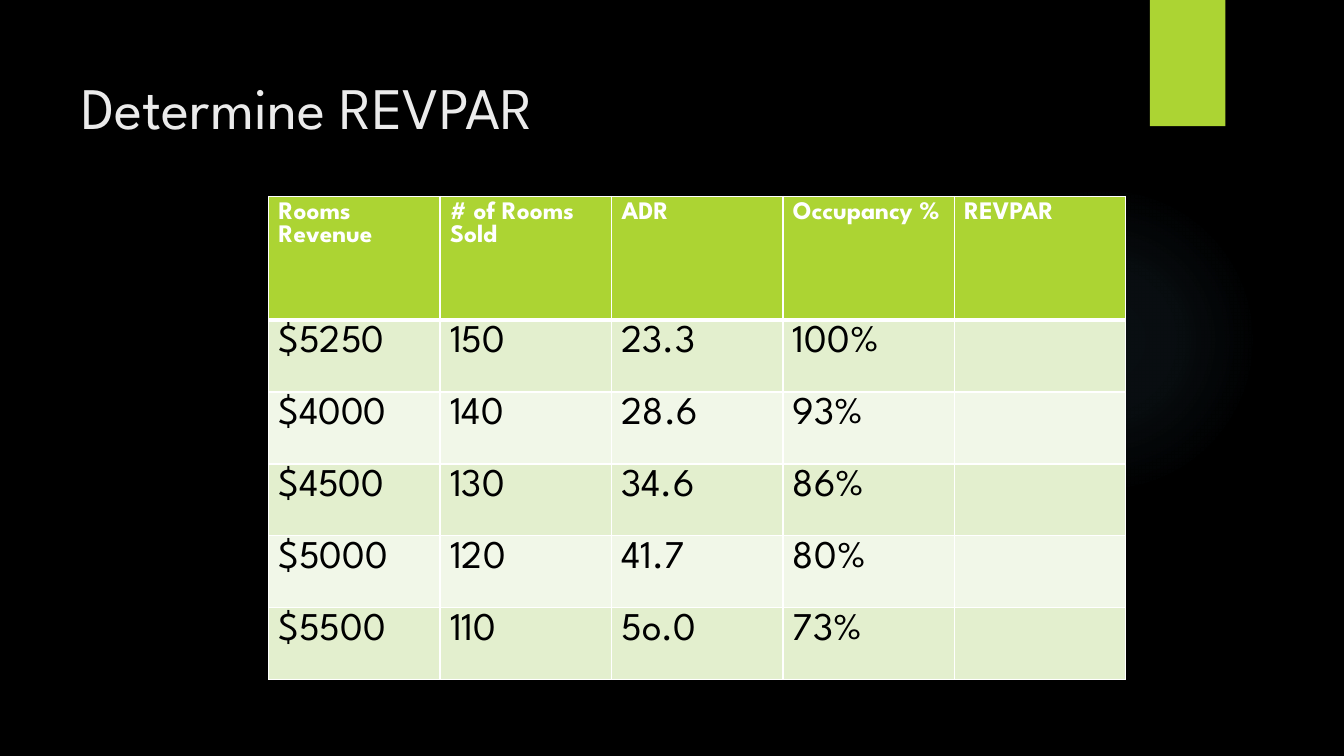
import pptx
import pptx.dml.color
import pptx.enum.shapes
import pptx.enum.text
import pptx.oxml
import pptx.oxml.ns
import pptx.util
from pptx.util import Cm

FONT = "League Spartan"
GREEN, WHITE, BLACK = "ACD433", "FFFFFF", "000000"
BANDS = ("E3EFCE", "F1F7E8")
GLOW = "7AC4F0"
GLOW_STOPS = ((0, 7), (36, 6), (69, 0))
HEADER_FORMAT = {"name": FONT, "size": pptx.util.Pt(18), "bold": True}
BODY_FORMAT = {"name": FONT, "size": pptx.util.Pt(28), "bold": False}
TITLE_FORMAT = {"name": FONT, "size": pptx.util.Pt(42), "bold": False}
ROWS = (
    ("Rooms Revenue", "# of Rooms Sold", "ADR", "Occupancy %", "REVPAR"),
    ("$5250", "150", "23.3", "100%", ""),
    ("$4000", "140", "28.6", "93%", ""),
    ("$4500", "130", "34.6", "86%", ""),
    ("$5000", "120", "41.7", "80%", ""),
    ("$5500", "110", "5o.0", "73%", ""),
)


def set_color(color_format, color):
    color_format.rgb = pptx.dml.color.RGBColor.from_string(color)


def set_fill(fill, color):
    fill.solid()
    set_color(fill.fore_color, color)


def format_font(font, values, color):
    for name, value in values.items():
        setattr(font, name, value)
    set_color(font.color, color)


def add_plain_shape(slide, kind, left, top, width, height):
    shape = slide.shapes.add_shape(kind, left, top, width, height)
    shape.shadow.inherit = False
    shape.line.fill.background()
    return shape


def add_glow(slide):
    """Add the faint circle that fades out from its centre."""
    glow = add_plain_shape(slide, pptx.enum.shapes.MSO_SHAPE.OVAL,
                           Cm(23.9), Cm(4.65), Cm(7.82), Cm(7.82))
    glow.fill.background()
    stops = "".join(
        f'<a:gs pos="{position * 1000}"><a:srgbClr val="{GLOW}">'
        f'<a:alpha val="{alpha * 1000}"/></a:srgbClr></a:gs>'
        for position, alpha in GLOW_STOPS)
    gradient = pptx.oxml.parse_xml(
        f'<a:gradFill {pptx.oxml.ns.nsdecls("a")}><a:gsLst>{stops}</a:gsLst>'
        '<a:path path="circle"><a:fillToRect l="50000" t="50000" r="50000" b="50000"/>'
        '</a:path></a:gradFill>')
    properties = glow.element.spPr
    properties.replace(properties.find(pptx.oxml.ns.qn("a:noFill")), gradient)


def add_tab(slide):
    tab = add_plain_shape(slide, pptx.enum.shapes.MSO_SHAPE.RECTANGLE,
                          Cm(28.98), Cm(0), Cm(1.9), Cm(3.18))
    set_fill(tab.fill, GREEN)


def set_title(slide, text):
    title = slide.shapes.title
    title.left, title.top, title.width, title.height = Cm(1.8), Cm(1.27), Cm(26.14), Cm(3.89)
    frame = title.text_frame
    frame.text = text
    frame.auto_size = pptx.enum.text.MSO_AUTO_SIZE.NONE
    frame.vertical_anchor = pptx.enum.text.MSO_ANCHOR.TOP
    frame.margin_top = Cm(0.5)
    paragraph = frame.paragraphs[0]
    paragraph.alignment = pptx.enum.text.PP_ALIGN.LEFT
    format_font(paragraph.runs[0].font, TITLE_FORMAT, "EBEBEB")


def set_borders(cell, widths):
    """Draw white cell borders; widths maps each side (L, R, T, B) to points."""
    properties = cell._tc.get_or_add_tcPr()
    for index, (side, width) in enumerate(widths.items()):
        properties.insert(index, pptx.oxml.parse_xml(
            f'<a:ln{side} {pptx.oxml.ns.nsdecls("a")} w="{pptx.util.Pt(width)}">'
            f'<a:solidFill><a:srgbClr val="{WHITE}"/></a:solidFill></a:ln{side}>'))


def add_revenue_table(slide):
    table = slide.shapes.add_table(len(ROWS), len(ROWS[0]), Cm(6.77), Cm(4.95),
                                   Cm(21.6), Cm(12.17)).table
    for column in table.columns:
        column.width = Cm(4.32)
    for row_index, texts in enumerate(ROWS):
        is_header = row_index == 0
        table.rows[row_index].height = Cm(3.12 if is_header else 1.81)
        fill = GREEN if is_header else BANDS[(row_index - 1) % 2]
        widths = {"L": 1, "R": 1, "T": 3 if row_index == 1 else 1, "B": 3 if is_header else 1}
        for column_index, text in enumerate(texts):
            cell = table.cell(row_index, column_index)
            set_fill(cell.fill, fill)
            set_borders(cell, widths)
            cell.text = text
            format_font(cell.text_frame.paragraphs[0].font,
                        HEADER_FORMAT if is_header else BODY_FORMAT,
                        WHITE if is_header else BLACK)


def main():
    presentation = pptx.Presentation()
    presentation.slide_width, presentation.slide_height = Cm(33.87), Cm(19.05)
    slide = presentation.slides.add_slide(presentation.slide_layouts[5])
    set_fill(slide.background.fill, BLACK)
    add_glow(slide)
    add_tab(slide)
    set_title(slide, "Determine REVPAR")
    add_revenue_table(slide)
    presentation.save("out.pptx")


if __name__ == "__main__":
    main()
